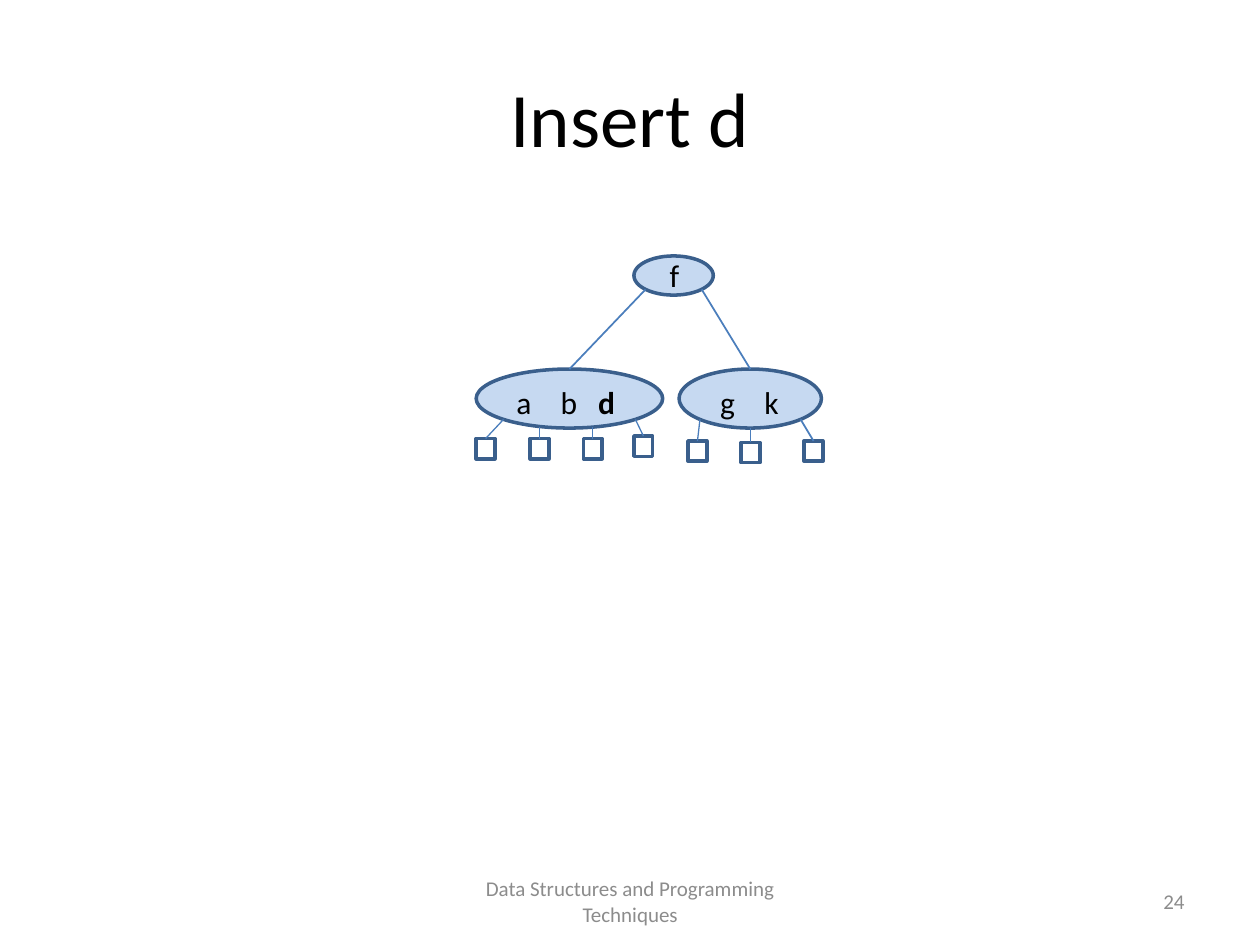
from dataclasses import dataclass
from math import sqrt

from lxml.etree import SubElement
from pptx import Presentation
from pptx.dml.color import RGBColor
from pptx.enum.shapes import MSO_CONNECTOR, MSO_SHAPE
from pptx.enum.text import MSO_ANCHOR, PP_ALIGN
from pptx.oxml.ns import qn
from pptx.util import Cm, Pt

BLACK = RGBColor(0x00, 0x00, 0x00)
GREY = RGBColor(0x8C, 0x8C, 0x8C)
NODE_FILL = RGBColor(0xC6, 0xD9, 0xF1)
OUTLINE = RGBColor(0x3A, 0x5F, 0x8C)
EDGE = RGBColor(0x4B, 0x7E, 0xBC)
FONT = "Calibri"
LEAF_WIDTH, LEAF_HEIGHT = 0.38, 0.41
KEY_TABS = (0.89, 1.65)  # second and third key, from the first one


@dataclass(frozen=True)
class Leaf:
    left: float
    top: float
    edge_width: float = 0.75


@dataclass(frozen=True)
class Node:
    keys: str
    left: float
    top: float
    width: float
    height: float
    key_left: float
    key_top: float
    leaves: tuple[Leaf, ...] = ()
    new_key: str = ""


ROOT = Node("f", 12.78, 5.16, 1.6, 0.79, 13.5, 5.03)
CHILDREN = (
    Node("abd", 9.6, 7.44, 3.76, 1.19, 10.41, 7.59,
         (Leaf(9.6, 8.84), Leaf(10.69, 8.84), Leaf(11.76, 8.84), Leaf(12.78, 8.79)),
         new_key="d"),
    Node("gk", 13.69, 7.44, 2.87, 1.19, 14.52, 7.59,
         (Leaf(13.87, 8.89), Leaf(14.94, 8.92, 1), Leaf(16.21, 8.89, 1))),
)


def style_run(run, size: float, color: RGBColor, bold: bool = False) -> None:
    run.font.name = FONT
    run.font.size = Pt(size)
    run.font.color.rgb = color
    run.font.bold = bold


def add_caption(slide, text: str, left: float, top: float, width: float, height: float,
                size: float, color: RGBColor, align: PP_ALIGN) -> None:
    frame = slide.shapes.add_textbox(Cm(left), Cm(top), Cm(width), Cm(height)).text_frame
    frame.word_wrap = True
    frame.vertical_anchor = MSO_ANCHOR.MIDDLE
    frame.text = text
    frame.paragraphs[0].alignment = align
    style_run(frame.paragraphs[0].runs[0], size, color)


def add_outlined(slide, kind: MSO_SHAPE, left: float, top: float,
                 width: float, height: float):
    shape = slide.shapes.add_shape(kind, Cm(left), Cm(top), Cm(width), Cm(height))
    shape.shadow.inherit = False
    shape.fill.background()
    shape.line.color.rgb = OUTLINE
    shape.line.width = Pt(2)
    return shape


def add_keys(slide, node: Node) -> None:
    frame = slide.shapes.add_textbox(
        Cm(node.key_left), Cm(node.key_top), Cm(2.2), Cm(1.02)).text_frame
    frame.word_wrap = True
    frame.margin_left = frame.margin_right = 0
    paragraph = frame.paragraphs[0]
    paragraph.alignment = PP_ALIGN.LEFT
    tab_list = SubElement(paragraph._p.get_or_add_pPr(), qn("a:tabLst"))
    for position in KEY_TABS[:len(node.keys) - 1]:
        SubElement(tab_list, qn("a:tab"), pos=str(int(Cm(position))), algn="l")
    for index, key in enumerate(node.keys):
        run = paragraph.add_run()
        run.text = f"\t{key}" if index else key
        style_run(run, 18, BLACK, bold=key == node.new_key)


def add_node(slide, node: Node):
    ellipse = add_outlined(slide, MSO_SHAPE.OVAL, node.left, node.top,
                           node.width, node.height)
    ellipse.fill.solid()
    ellipse.fill.fore_color.rgb = NODE_FILL
    add_keys(slide, node)
    return ellipse


def join(slide, parent: Node, child_shape, line_width: float) -> None:
    """Run from the parent's lower rim, at most 45 degrees out, to the child's top."""
    center = parent.left + parent.width / 2
    reach = parent.width / 2 / sqrt(2)
    child_x = (child_shape.left + child_shape.width / 2) / Cm(1)
    offset = max(-reach, min(reach, child_x - center))
    drop = sqrt(1 - (2 * offset / parent.width) ** 2)
    rim_y = parent.top + parent.height / 2 * (1 + drop)
    edge = slide.shapes.add_connector(
        MSO_CONNECTOR.STRAIGHT, Cm(center + offset), Cm(rim_y),
        Cm(child_x), child_shape.top)
    edge.end_connect(child_shape, 0)
    edge.line.color.rgb = EDGE
    edge.line.width = Pt(line_width)
    SubElement(edge._element.spPr, qn("a:effectLst"))


def main() -> None:
    presentation = Presentation()
    presentation.slide_width, presentation.slide_height = Cm(25.4), Cm(19.05)
    slide = presentation.slides.add_slide(presentation.slide_layouts[6])

    # Title and footer
    add_caption(slide, "Insert d", 1.27, 0.76, 22.86, 3.18, 44, BLACK, PP_ALIGN.CENTER)
    add_caption(slide, "Data Structures and Programming Techniques",
                8.68, 17.66, 8.05, 1.01, 12, GREY, PP_ALIGN.CENTER)
    add_caption(slide, "24", 18.2, 17.66, 5.93, 1.01, 12, GREY, PP_ALIGN.RIGHT)

    # Tree: root, its children and their empty leaves
    add_node(slide, ROOT)
    for child in CHILDREN:
        join(slide, ROOT, add_node(slide, child), 1)
        for leaf in child.leaves:
            box = add_outlined(slide, MSO_SHAPE.RECTANGLE, leaf.left, leaf.top,
                               LEAF_WIDTH, LEAF_HEIGHT)
            join(slide, child, box, leaf.edge_width)

    presentation.save("out.pptx")


if __name__ == "__main__":
    main()
